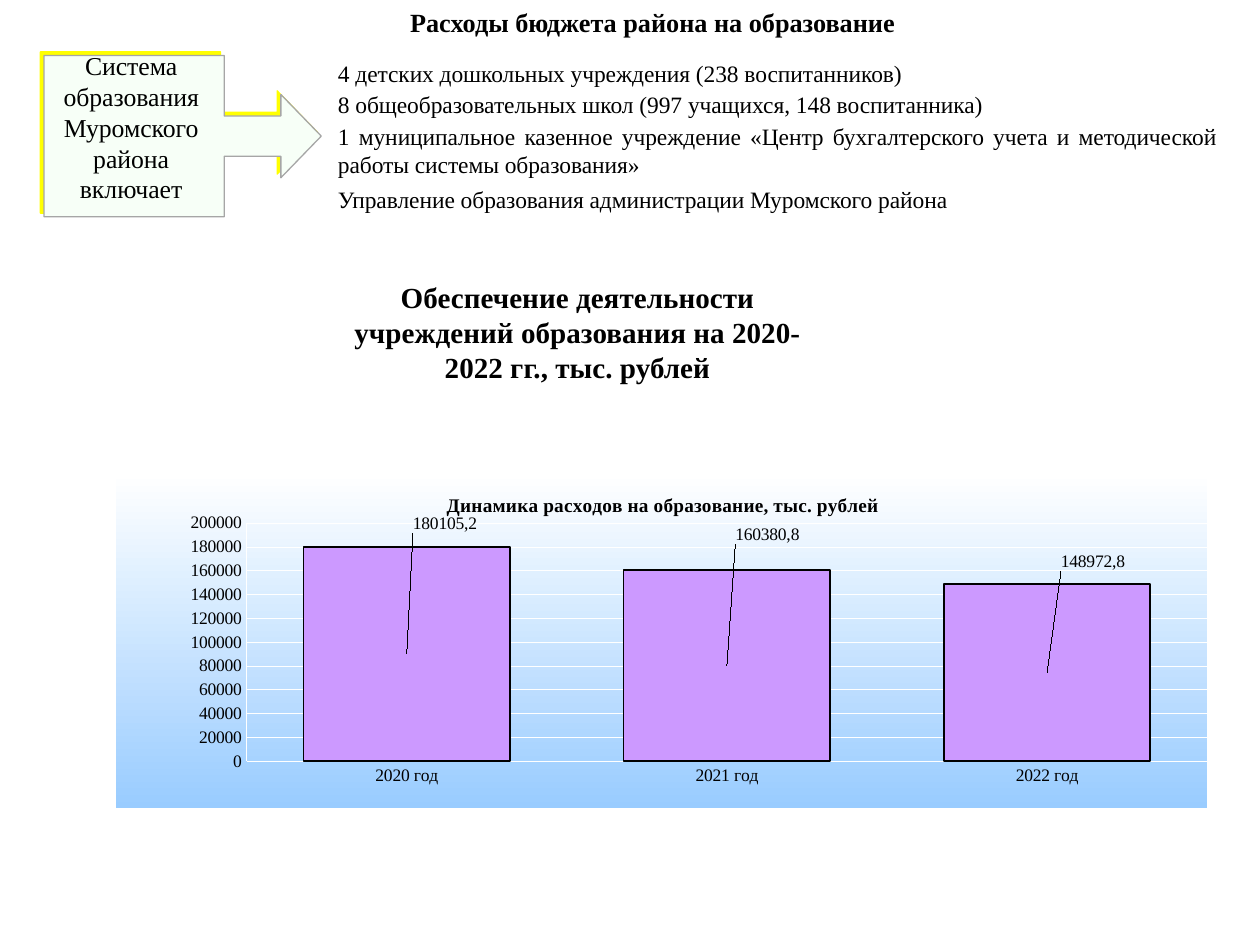
from pptx import Presentation
from pptx.chart.data import CategoryChartData
from pptx.dml.color import RGBColor
from pptx.enum.chart import XL_CHART_TYPE as ChartType, XL_TICK_MARK as TickMark
from pptx.enum.shapes import MSO_SHAPE as Shape
from pptx.enum.text import MSO_AUTO_SIZE as AutoSize, PP_ALIGN as Align
from pptx.oxml import parse_xml
from pptx.oxml.ns import nsdecls
from pptx.util import Pt

BLACK = RGBColor(0x00, 0x00, 0x00)
WHITE = RGBColor(0xFF, 0xFF, 0xFF)
MINT = RGBColor(0xCC, 0xFF, 0xCC)
YELLOW = RGBColor(0xFF, 0xFF, 0x00)
SKY = RGBColor(0x99, 0xCC, 0xFF)
VIOLET = RGBColor(0xCC, 0x99, 0xFF)
FONT = "Times New Roman"

INSTITUTIONS = [
    # text, top, height, alignment
    ("4 детских дошкольных учреждения (238 воспитанников)", 30, 23, Align.LEFT),
    ("8 общеобразовательных школ (997 учащихся, 148 воспитанника)", 48, 23, Align.JUSTIFY),
    ("1 муниципальное казенное учреждение «Центр бухгалтерского учета и "
     "методической работы системы образования»", 66, 38, Align.JUSTIFY),
    ("Управление образования администрации Муромского района", 102, 23, Align.LEFT),
]
SPENDING = [
    # year, value, label, label shift as a share of the chart
    ("2020 год", 180105.2, "180105,2", (0.035, -0.39)),
    ("2021 год", 160380.8, "160380,8", (0.037, -0.39)),
    ("2022 год", 148972.8, "148972,8", (0.042, -0.33)),
]


def set_font(font, size, bold=False):
    font.name = FONT
    font.size = Pt(size)
    font.bold = bold
    font.color.rgb = BLACK


def add_text(page, text, box, size, bold=False, align=Align.LEFT):
    left, top, width, height = box
    frame = page.shapes.add_textbox(Pt(left), Pt(top), Pt(width), Pt(height)).text_frame
    frame.word_wrap = True
    frame.auto_size = AutoSize.SHAPE_TO_FIT_TEXT
    para = frame.paragraphs[0]
    para.alignment = align
    span = para.add_run()
    span.text = text
    set_font(span.font, size, bold)


def add_callout(page, left, top):
    arrow = page.shapes.add_shape(Shape.RIGHT_ARROW_CALLOUT, Pt(left), Pt(top), Pt(158.4), Pt(92.2))
    for index, value in enumerate((0.25, 0.258, 0.25, 0.65)):
        arrow.adjustments[index] = value
    arrow.fill.solid()
    arrow.fill.fore_color.rgb = MINT
    arrow.fill.fore_color.brightness = 0.85
    arrow.line.color.rgb = BLACK
    arrow.line.color.brightness = 0.65
    arrow.line.width = Pt(0.75)
    arrow.shadow.inherit = False
    effects = arrow.element.spPr.xpath("./a:effectLst")[0]
    effects.append(parse_xml(
        f'<a:outerShdw {nsdecls("a")} dist="{Pt(3)}" dir="13500000" algn="ctr" rotWithShape="0">'
        f'<a:srgbClr val="{YELLOW}"/></a:outerShdw>'))
    add_text(page, "Система образования Муромского района включает",
             (left - 7.2, top - 6.5, 113.8, 92.2), 14.67, align=Align.CENTER)


def add_institutions(page, left, width):
    for text, top, height, align in INSTITUTIONS:
        add_text(page, text, (left, top, width, height), 13.33, align=align)


def set_layout(parent, index, x, y, size=None):
    """Place a chart part by hand; size is given for the inner plot area only."""
    for old in parent.xpath("./c:layout"):
        parent.remove(old)
    parts = [("x", x), ("y", y)]
    head = ""
    if size:
        head = '<c:layoutTarget val="inner"/><c:xMode val="edge"/><c:yMode val="edge"/>'
        parts += zip("wh", size)
    elif parent.tag.endswith("}title"):
        head = '<c:xMode val="edge"/><c:yMode val="edge"/>'
    values = "".join(f'<c:{name} val="{value}"/>' for name, value in parts)
    parent.insert(index, parse_xml(
        f'<c:layout {nsdecls("c")}><c:manualLayout>{head}{values}</c:manualLayout></c:layout>'))


def set_line(line, color, width):
    line.color.rgb = color
    line.width = Pt(width)


def fill_background(chart):
    chart.element.xpath("./c:chart")[0].addnext(parse_xml(
        f'<c:spPr {nsdecls("c", "a")}><a:gradFill><a:gsLst>'
        f'<a:gs pos="0"><a:srgbClr val="{WHITE}"/></a:gs>'
        f'<a:gs pos="100000"><a:srgbClr val="{SKY}"/></a:gs>'
        f'</a:gsLst><a:lin ang="5400000" scaled="0"/></a:gradFill>'
        f'<a:ln w="{Pt(0.25)}"><a:solidFill><a:srgbClr val="{WHITE}"/></a:solidFill></a:ln></c:spPr>'))


def style_axes(chart):
    for axis in (chart.category_axis, chart.value_axis):
        axis.major_tick_mark = axis.minor_tick_mark = TickMark.NONE
        set_font(axis.tick_labels.font, 10)
        set_line(axis.format.line, WHITE, 0.25)
    values = chart.value_axis
    values.minimum_scale, values.maximum_scale, values.major_unit = 0, 200000, 20000
    values.has_major_gridlines = True
    set_line(values.major_gridlines.format.line, WHITE, 0.25)
    values.tick_labels.number_format = "0"
    values.tick_labels.number_format_is_linked = False


def style_columns(chart):
    plot = chart.plots[0]
    plot.gap_width = 55
    plot.overlap = 100
    plot.vary_by_categories = False
    series = plot.series[0]
    series.format.fill.solid()
    series.format.fill.fore_color.rgb = VIOLET
    set_line(series.format.line, BLACK, 1)
    series.data_labels.show_value = True
    set_font(series.data_labels.font, 10)
    for index, (_, _, text, shift) in enumerate(SPENDING):
        para = series.points[index].data_label.text_frame.paragraphs[0]
        span = para.add_run()
        span.text = text
        set_font(span.font, 10)
        label = chart.element.xpath(".//c:ser/c:dLbls/c:dLbl")[index]
        set_layout(label, 1, *shift)


def add_spending_chart(page, left, top, width, height):
    data = CategoryChartData()
    data.categories = [year for year, *_ in SPENDING]
    data.add_series("Series 1", [value for _, value, *_ in SPENDING])
    chart = page.shapes.add_chart(ChartType.COLUMN_STACKED, Pt(left), Pt(top),
                                  Pt(width), Pt(height), data).chart
    set_font(chart.font, 10)
    chart.has_legend = False
    chart.has_title = True
    span = chart.chart_title.text_frame.paragraphs[0].add_run()
    span.text = "Динамика расходов на образование, тыс. рублей"
    set_font(span.font, 11, bold=True)
    set_layout(chart.element.xpath("./c:chart/c:title")[0], 1, 0.3, 0.05)
    set_layout(chart.element.xpath("./c:chart/c:plotArea")[0], 0, 0.12, 0.15, (0.88, 0.71))
    fill_background(chart)
    style_axes(chart)
    style_columns(chart)


def main():
    deck = Presentation()
    deck.slide_width, deck.slide_height = Pt(720), Pt(540)
    page = deck.slides.add_slide(deck.slide_layouts[6])
    add_text(page, "Расходы бюджета района на образование", (78, 0, 590, 25), 15,
             bold=True, align=Align.CENTER)
    add_callout(page, 25.2, 31.7)
    add_institutions(page, 186, 516)
    add_text(page, "Обеспечение деятельности учреждений образования на 2020-2022 гг., тыс. рублей",
             (186, 156, 288, 65.5), 16.67, bold=True, align=Align.CENTER)
    add_spending_chart(page, 66, 270, 624, 192)
    deck.save("out.pptx")


if __name__ == "__main__":
    main()
